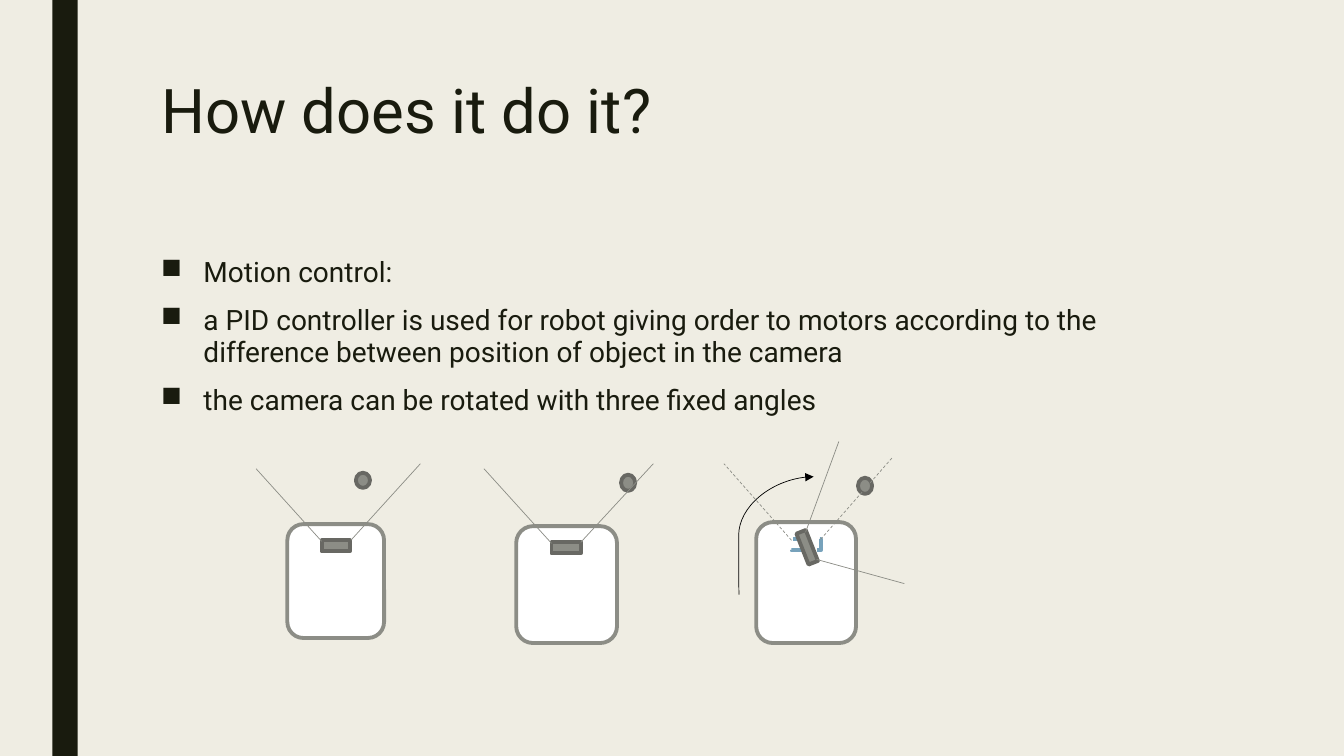
from dataclasses import dataclass
from lxml.etree import SubElement
from pptx import Presentation
from pptx.dml.color import RGBColor
from pptx.enum.dml import MSO_LINE
from pptx.enum.shapes import MSO_CONNECTOR, MSO_SHAPE
from pptx.enum.text import MSO_ANCHOR, PP_ALIGN
from pptx.oxml.ns import qn
from pptx.util import Inches, Pt

TITLE = "How does it do it?"
POINTS = [
    "Motion control:",
    "a PID controller is used for robot giving order to motors according to the "
    "difference between position of object in the camera",
    "the camera can be rotated with three fixed angles",
]
ROBOTS = [
    {"body": (2.85, 5.2, 0.96, 1.13), "lens": (3.19, 5.36, 0.28, 0.11),
     "ball": (3.53, 4.69, 0.14, 0.15),
     "rays": [(3.19, 5.37, 2.54, 4.65), (3.48, 5.36, 4.17, 4.6)]},
    {"body": (5.12, 5.22, 1, 1.16), "lens": (5.47, 5.38, 0.29, 0.11),
     "ball": (6.16, 4.71, 0.14, 0.16),
     "rays": [(5.47, 5.39, 4.8, 4.65), (5.76, 5.38, 6.48, 4.6)]},
    {"body": (7.5, 5.18, 0.99, 1.2), "ghost": (7.85, 5.35, 0.29, 0.11),
     "ball": (8.51, 4.74, 0.14, 0.16),
     "old": [(7.85, 5.36, 7.18, 4.6), (8.14, 5.35, 8.85, 4.54)],
     "lens": (7.84, 5.38, 0.33, 0.1), "turn": 68.5,
     "rays": [(7.99, 5.28, 8.32, 4.38), (8.1, 5.55, 8.97, 5.79)],
     "arc": (7.33, 5.9, 8.07, 4.73)},
]


@dataclass(frozen=True)
class Theme:
    """Colours, font and sizes."""
    back: str = "EFEDE3"
    ink: str = "191B0E"
    white: str = "FFFFFF"
    grey: str = "8C8D86"
    dark: str = "686863"
    blue: str = "77A2BB"
    black: str = "000000"
    font: str = "Roboto"
    head: int = 44
    text: int = 20
    edge: float = 2.75
    thin: float = 0.5


LOOK = Theme()
KINDS = {
    "body": (MSO_SHAPE.ROUNDED_RECTANGLE, LOOK.white, LOOK.grey),
    "ghost": (MSO_SHAPE.RECTANGLE, LOOK.white, LOOK.blue),
    "lens": (MSO_SHAPE.RECTANGLE, LOOK.grey, LOOK.dark),
    "ball": (MSO_SHAPE.OVAL, LOOK.grey, LOOK.dark),
}


def paint(fill, tint):
    """Fill with one solid colour."""
    fill.solid()
    fill.fore_color.rgb = RGBColor.from_string(tint)


def stroke(line, tint, width, dash=False):
    """Set the colour, width and dash of a line."""
    paint(line.fill, tint)
    line.width = Pt(width)
    if dash:
        line.dash_style = MSO_LINE.DASH


def block(home, kind, box, fill, edge=None, dash=False):
    """Add a preset shape."""
    shape = home.add_shape(kind, *map(Inches, box))
    shape.shadow.inherit = False
    paint(shape.fill, fill)
    if edge:
        stroke(shape.line, edge, LOOK.edge, dash)
    else:
        shape.line.fill.background()
    return shape


def link(home, ends, tint, dash=False, kind=MSO_CONNECTOR.STRAIGHT):
    """Add a thin connector."""
    line = home.add_connector(kind, *map(Inches, ends))
    stroke(line.line, tint, LOOK.thin, dash)
    SubElement(line._element.spPr, qn("a:effectLst"))
    return line


def arc(home, ends):
    """Add the curved turning arrow."""
    line = link(home, ends, LOOK.black, kind=MSO_CONNECTOR.CURVE)
    props = line._element.spPr
    SubElement(props.find(qn("a:ln")), qn("a:tailEnd"), type="triangle")
    guides = props.find(qn("a:prstGeom")).get_or_add_avLst()
    SubElement(guides, qn("a:gd"), name="adj1", fmla="val -500")


def robot(slide, data):
    """Draw one robot with its camera, its view and the ball."""
    home = slide.shapes.add_group_shape().shapes
    for name in ("body", "ghost", "ball"):
        if name in data:
            kind, fill, edge = KINDS[name]
            block(home, kind, data[name], fill, edge, name == "ghost")
    for ends in data.get("old", []):
        link(home, ends, LOOK.grey, True)
    kind, fill, edge = KINDS["lens"]
    block(home, kind, data["lens"], fill, edge).rotation = data.get("turn", 0)
    for ends in data["rays"]:
        link(home, ends, LOOK.grey)
    if "arc" in data:
        arc(home, data["arc"])


def write(shape, lines, size, lead):
    """Write left-aligned paragraphs from the top of a shape."""
    frame = shape.text_frame
    frame.text = "\n".join(lines)
    frame.word_wrap = True
    frame.vertical_anchor = MSO_ANCHOR.TOP
    for para in frame.paragraphs:
        para.alignment = PP_ALIGN.LEFT
        para.line_spacing = lead
        for run in para.runs:
            run.font.name = LOOK.font
            run.font.size = Pt(size)
            run.font.color.rgb = RGBColor.from_string(LOOK.ink)
    return frame.paragraphs


def bullet(para):
    """Give a paragraph a square bullet and a hanging indent."""
    para.space_before, para.space_after = Pt(10), Pt(2)
    props = para._p.get_or_add_pPr()
    props.set("marL", str(Inches(0.42)))
    props.set("indent", str(Inches(-0.42)))
    SubElement(props, qn("a:buChar"), char="■")


def main():
    """Build and save the slide."""
    deck = Presentation()
    deck.slide_width, deck.slide_height = Inches(13.33), Inches(7.5)
    slide = deck.slides.add_slide(deck.slide_layouts[5])
    paint(slide.background.fill, LOOK.back)
    block(slide.shapes, MSO_SHAPE.RECTANGLE, (0.52, 0, 0.25, 7.5), LOOK.ink)
    title = slide.shapes.title
    title.left, title.top = Inches(1.5), Inches(0.75)
    title.width, title.height = Inches(10.5), Inches(1.62)
    write(title, [TITLE], LOOK.head, 0.89)
    body = slide.shapes.add_textbox(*map(Inches, (1.5, 2.5, 10.5, 3.92)))
    for para in write(body, POINTS, LOOK.text, 0.94):
        bullet(para)
    for data in ROBOTS:
        robot(slide, data)
    deck.save("out.pptx")


if __name__ == "__main__":
    main()
